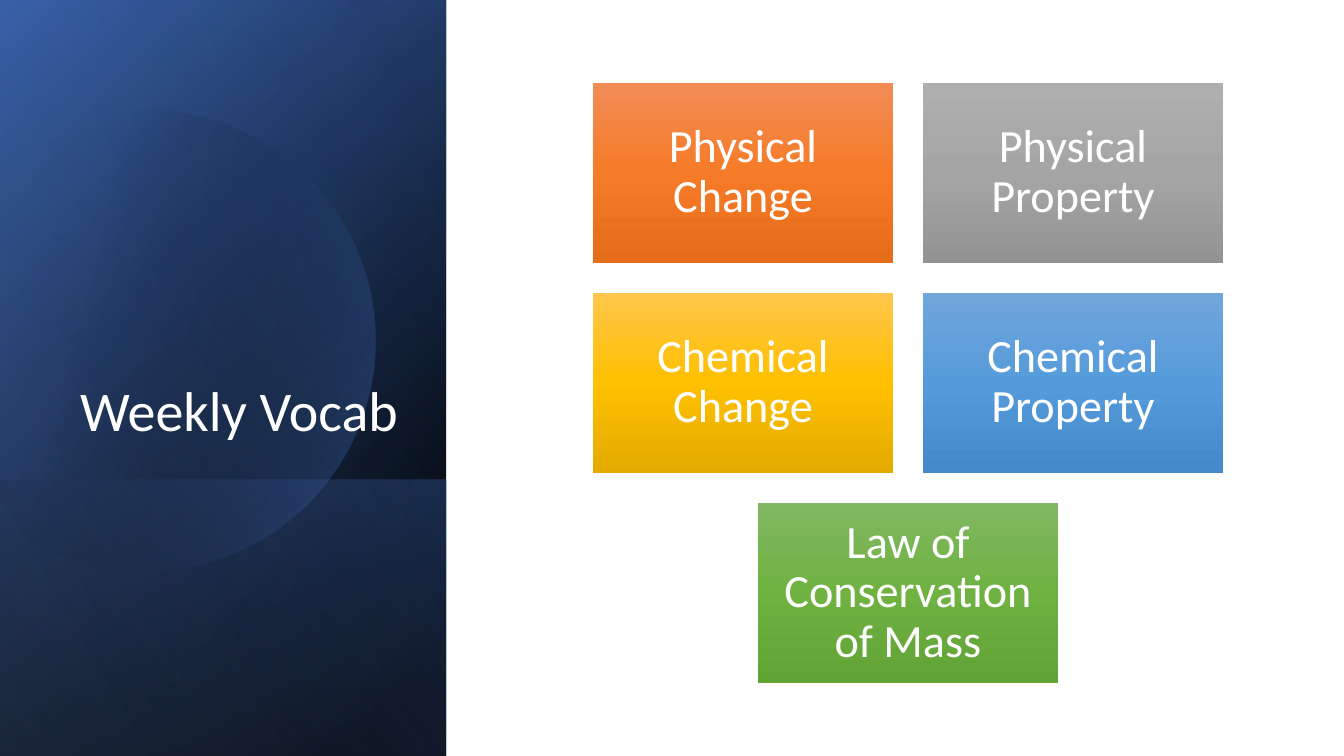
import dataclasses
import math

import pptx
import pptx.dml.color
import pptx.enum.shapes
import pptx.enum.text
import pptx.oxml
import pptx.oxml.ns
import pptx.util


@dataclasses.dataclass(frozen=True)
class Theme:
    font: str = "Calibri"
    text: str = "FFFFFF"
    title_size: int = 40
    card_size: int = 33
    line_spacing: float = 0.9
    night: str = "000000"
    blue: str = "4472C4"
    deep_blue: str = "2F5597"
    pale_blue: str = "8FAADC"
    orange: tuple = ("F18C57", "F67B28", "E56C19")
    grey: tuple = ("AFAFAF", "A5A5A5", "939393")
    gold: tuple = ("FFC64B", "FFC000", "E3AB00")
    sky: tuple = ("71A6DB", "559BDB", "448ACA")
    green: tuple = ("81B861", "6FB242", "62A336")


@dataclasses.dataclass(frozen=True)
class Box:
    left: int
    top: int
    width: int
    height: int


THEME = Theme()
PAGE = Box(0, 0, 1344, 756)
CARD_ROWS = [
    [("Physical Change", THEME.orange), ("Physical Property", THEME.grey)],
    [("Chemical Change", THEME.gold), ("Chemical Property", THEME.sky)],
    [("Law of Conservation of Mass", THEME.green)],
]


def px(length):
    return pptx.util.Emu(round(length * 914400 / 100.8))


def frame(box):
    return px(box.left), px(box.top), px(box.width), px(box.height)


def paint(shape, stops, angle):
    shape.shadow.inherit = False
    shape.line.fill.background()
    shape.fill.background()
    marks = "".join(
        f'<a:gs pos="{place * 1000}"><a:srgbClr val="{color}">'
        f'<a:alpha val="{alpha * 1000}"/></a:srgbClr></a:gs>'
        for place, color, alpha in stops
    )
    gradient = pptx.oxml.parse_xml(
        f'<a:gradFill {pptx.oxml.ns.nsdecls("a")} rotWithShape="1">'
        f"<a:gsLst>{marks}</a:gsLst>"
        f'<a:lin ang="{angle * 60000}" scaled="0"/></a:gradFill>'
    )
    properties = shape.element.spPr
    properties.replace(properties.find(pptx.oxml.ns.qn("a:noFill")), gradient)


def add_rectangle(page, box):
    return page.shapes.add_shape(
        pptx.enum.shapes.MSO_SHAPE.RECTANGLE, *frame(box)
    )


def add_turned_layer(page, box, stops, angle):
    shift = (box.width - box.height) / 2
    layer = add_rectangle(
        page, Box(box.left + shift, box.top - shift, box.height, box.width)
    )
    layer.rotation = 90
    layer.element.spPr.xfrm.set("flipH", "1")
    paint(layer, stops, angle)


def add_disc(page, box):
    center_x, center_y, radius, cut = box.left + 144, box.top + 341, 231, box.left - 15
    limit = math.acos((cut - center_x) / radius)
    steps = 120
    angles = [limit * (2 * step / steps - 1) for step in range(steps + 1)]
    points = [
        (px(center_x + radius * math.cos(angle)), px(center_y + radius * math.sin(angle)))
        for angle in angles
    ]
    builder = page.shapes.build_freeform(*points[0])
    builder.add_line_segments(points[1:], close=True)
    paint(builder.convert_to_shape(), [(29, THEME.night, 0), (100, THEME.blue, 43)], 14)


def write(shape, text, size, alignment, anchor):
    text_frame = shape.text_frame
    text_frame.text = text
    text_frame.word_wrap = True
    text_frame.auto_size = pptx.enum.text.MSO_AUTO_SIZE.NONE
    text_frame.vertical_anchor = anchor
    para = text_frame.paragraphs[0]
    para.alignment = alignment
    para.line_spacing = THEME.line_spacing
    para.font.name = THEME.font
    para.font.size = pptx.util.Pt(size)
    para.font.color.rgb = pptx.dml.color.RGBColor.from_string(THEME.text)


def add_title_panel(page, box):
    foot = Box(box.left, box.top + 480, box.width, box.height - 480)
    add_turned_layer(page, box, [(8, THEME.night, 100), (100, THEME.deep_blue, 100)], 50)
    add_turned_layer(page, box, [(0, THEME.night, 0), (99, THEME.blue, 46)], 30)
    add_turned_layer(page, foot, [(2, THEME.blue, 29), (100, THEME.night, 30)], 130)
    add_disc(page, box)
    add_turned_layer(page, box, [(0, THEME.night, 0), (99, THEME.pale_blue, 11)], 120)

    title = page.shapes.title
    title.element.getparent().append(title.element)
    title.left, title.top, title.width, title.height = frame(
        Box(box.left + 64, box.top + 185, 344, 264)
    )
    write(
        title,
        "Weekly Vocab",
        THEME.title_size,
        pptx.enum.text.PP_ALIGN.RIGHT,
        pptx.enum.text.MSO_ANCHOR.BOTTOM,
    )


def add_card(page, box, text, colors):
    card = add_rectangle(page, box)
    paint(card, [(place, color, 100) for place, color in zip((0, 50, 100), colors)], 90)
    text_frame = card.text_frame
    text_frame.margin_left = text_frame.margin_right = px(14)
    text_frame.margin_top = text_frame.margin_bottom = px(14)
    write(
        card,
        text,
        THEME.card_size,
        pptx.enum.text.PP_ALIGN.CENTER,
        pptx.enum.text.MSO_ANCHOR.MIDDLE,
    )


def add_card_grid(page, box):
    gap = 30
    width = (box.width - gap) / 2
    height = (box.height - gap * (len(CARD_ROWS) - 1)) / len(CARD_ROWS)
    for row, cards in enumerate(CARD_ROWS):
        row_width = len(cards) * (width + gap) - gap
        left = box.left + (box.width - row_width) / 2
        top = box.top + row * (height + gap)
        for column, (text, colors) in enumerate(cards):
            place = Box(left + column * (width + gap), top, width, height)
            add_card(page, place, text, colors)


def main():
    deck = pptx.Presentation()
    deck.slide_width, deck.slide_height = px(PAGE.width), px(PAGE.height)
    page = deck.slides.add_slide(deck.slide_layouts.get_by_name("Title Only"))
    add_title_panel(page, Box(0, 0, 446, PAGE.height))
    add_card_grid(page, Box(593, 83, 630, 600))
    deck.save("out.pptx")


if __name__ == "__main__":
    main()
